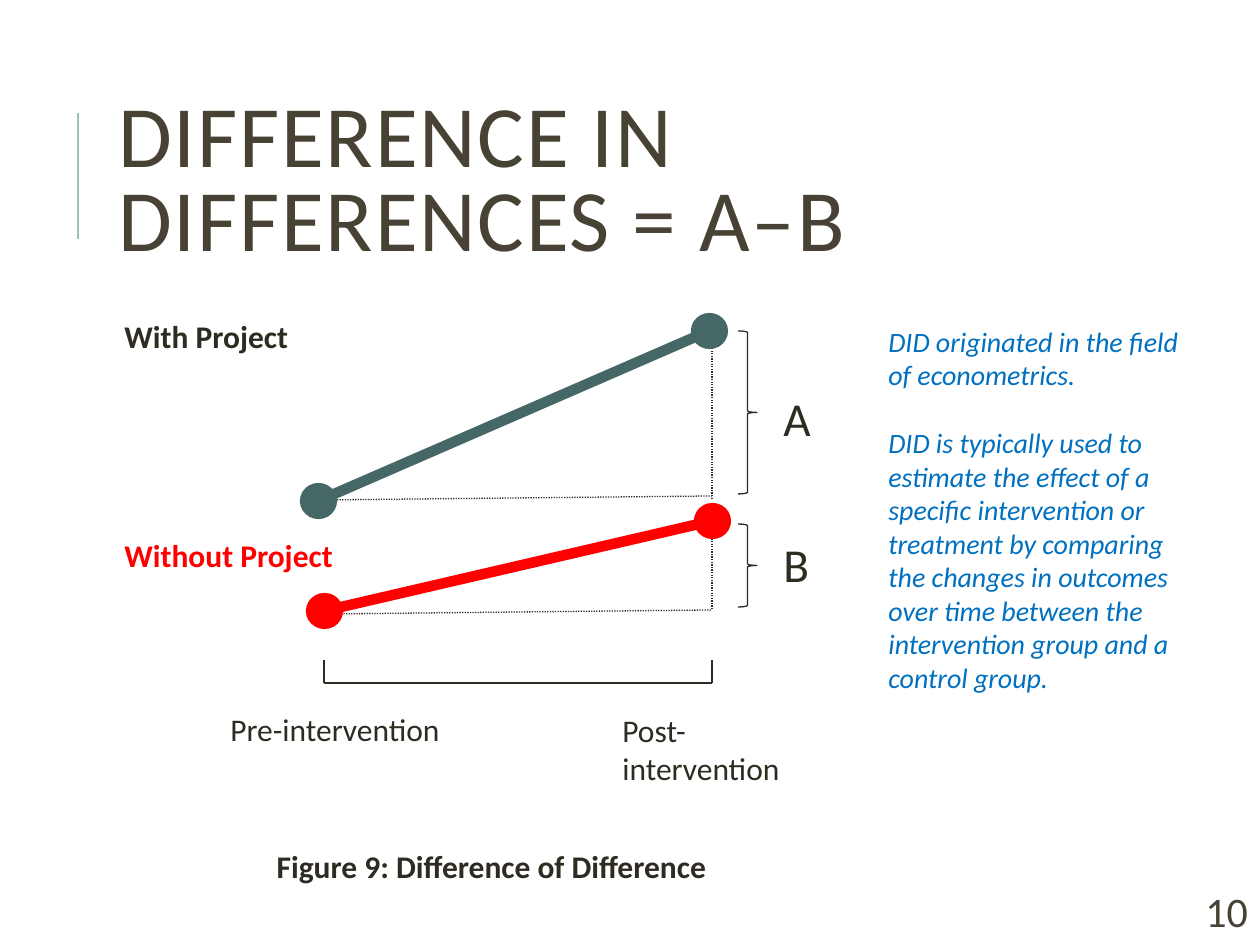
from pptx import Presentation, util as u
from pptx.dml.color import RGBColor
from pptx.enum import dml, shapes, text
from pptx.oxml.ns import qn
from lxml import etree

PX = 914400 // 126
THEME = {
    "font": "Calibri",
    "ink": "2E2B21", "heading": "474233", "rule": "9CBEBD",
    "teal": "456867", "red": "FF0000", "blue": "0070C0",
    "title": 50, "letter": 27, "number": 24, "label": 18, "note": 16,
    "thin": 0.75, "edge": 1.25, "accent": 1.5, "trend": 6,
}
PRE, POST = 324, 712
AXIS_TOP, AXIS_BOTTOM = 660, 683
DOT_W, DOT_H = 35, 34

# start point, end point, colour
TRENDS = [
    ((318, 501), (709, 331), "teal"),
    ((PRE, 611), (POST, 521), "red"),
]
GUIDES = [
    ((POST, 523), (POST, 610)),
    ((POST, 330), (POST, 499)),
    ((328, 614), (POST, 610)),
    ((319, 500), (POST, 496)),
]
AXIS = [
    ((PRE, AXIS_BOTTOM), (POST, AXIS_BOTTOM)),
    ((PRE, AXIS_TOP), (PRE, AXIS_BOTTOM)),
    ((POST, AXIS_TOP), (POST, AXIS_BOTTOM)),
]
BRACES = [(738, 331, 19, 163), (738, 524, 19, 83)]

# box, paragraphs, size, colour, formats
TEXTS = [
    ((106, 81, 1075, 207), ["DIFFERENCE IN DIFFERENCES = A–B"], "title", "heading",
     {"middle": True, "line_spacing": 0.8, "tracking": 100}),
    ((218, 704, 238, 50), ["Pre-intervention"], "label", "ink", {}),
    ((610, 705, 238, 82), ["Post-intervention"], "label", "ink", {}),
    ((771, 383, 57, 64), ["A"], "letter", "ink", {}),
    ((771, 529, 57, 64), ["B"], "letter", "ink", {}),
    ((112, 311, 460, 50), ["With Project"], "label", "ink", {"bold": True}),
    ((112, 530, 501, 50), ["Without Project"], "label", "red", {"bold": True}),
    ((166, 841, 651, 50), ["Figure 9: Difference of Difference"], "label", "ink",
     {"bold": True, "alignment": text.PP_ALIGN.CENTER}),
    ((876, 318, 339, 386), [
        "DID originated in the field of econometrics.",
        "DID is typically used to estimate the effect of a specific intervention or "
        "treatment by comparing the\u00a0changes\u00a0in outcomes over time between the "
        "intervention group and a control group.",
    ], "note", "blue", {"italic": True, "gap": 19.5}),
    ((1193, 892, 101, 38), ["10"], "number", "heading", {"middle": True}),
]


def rgb(name):
    return RGBColor.from_string(THEME[name])


def emu(values):
    return [v * PX for v in values]


def style_line(line, color, weight, dash=None):
    line.color.rgb = rgb(color)
    line.width = u.Pt(THEME[weight])
    if dash:
        line.dash_style = dash


def add_line(s, start, end, color="ink", weight="thin", dash=None):
    c = s.shapes.add_connector(shapes.MSO_CONNECTOR.STRAIGHT, *emu(start + end))
    style_line(c.line, color, weight, dash)
    etree.SubElement(c._element.spPr, qn("a:effectLst"))


def add_dot(s, center, color):
    x, y = center
    box = emu((x - DOT_W // 2, y - DOT_H // 2, DOT_W, DOT_H))
    sp = s.shapes.add_shape(shapes.MSO_SHAPE.OVAL, *box)
    sp.shadow.inherit = False
    sp.fill.solid()
    sp.fill.fore_color.rgb = rgb(color)
    style_line(sp.line, color, "edge")


def add_brace(s, box):
    sp = s.shapes.add_shape(shapes.MSO_SHAPE.RIGHT_BRACE, *emu(box))
    sp.shadow.inherit = False
    sp.fill.background()
    style_line(sp.line, "ink", "thin")


def add_text(s, box, paragraphs, size, color, formats):
    tf = s.shapes.add_textbox(*emu(box)).text_frame
    tf.word_wrap = True
    if formats.get("middle"):
        tf.vertical_anchor = text.MSO_ANCHOR.MIDDLE
    for i, words in enumerate(paragraphs):
        p = tf.add_paragraph() if i else tf.paragraphs[0]
        if i:
            p.space_before = u.Pt(formats["gap"])
        r = p.add_run()
        r.text = words
        r.font.name = THEME["font"]
        r.font.size = u.Pt(THEME[size])
        r.font.color.rgb = rgb(color)
        for target, names in ((p, ("alignment", "line_spacing")),
                              (r.font, ("bold", "italic"))):
            for name in names:
                if name in formats:
                    setattr(target, name, formats[name])
        if "tracking" in formats:
            r._r.get_or_add_rPr().set("spc", str(formats["tracking"]))


def main():
    prs = Presentation()
    prs.slide_width, prs.slide_height = u.Inches(10), u.Inches(7.5)
    s = prs.slides.add_slide(prs.slide_layouts[6])

    add_line(s, (78, 239), (78, 113), "rule", "accent")
    for start, end in GUIDES:
        add_line(s, start, end, dash=dml.MSO_LINE.ROUND_DOT)
    for start, end, color in TRENDS:
        add_line(s, start, end, color, "trend")
        for center in (start, end):
            add_dot(s, center, color)
    for start, end in AXIS:
        add_line(s, start, end)
    for box in BRACES:
        add_brace(s, box)
    for item in TEXTS:
        add_text(s, *item)

    prs.save("out.pptx")


if __name__ == "__main__":
    main()
